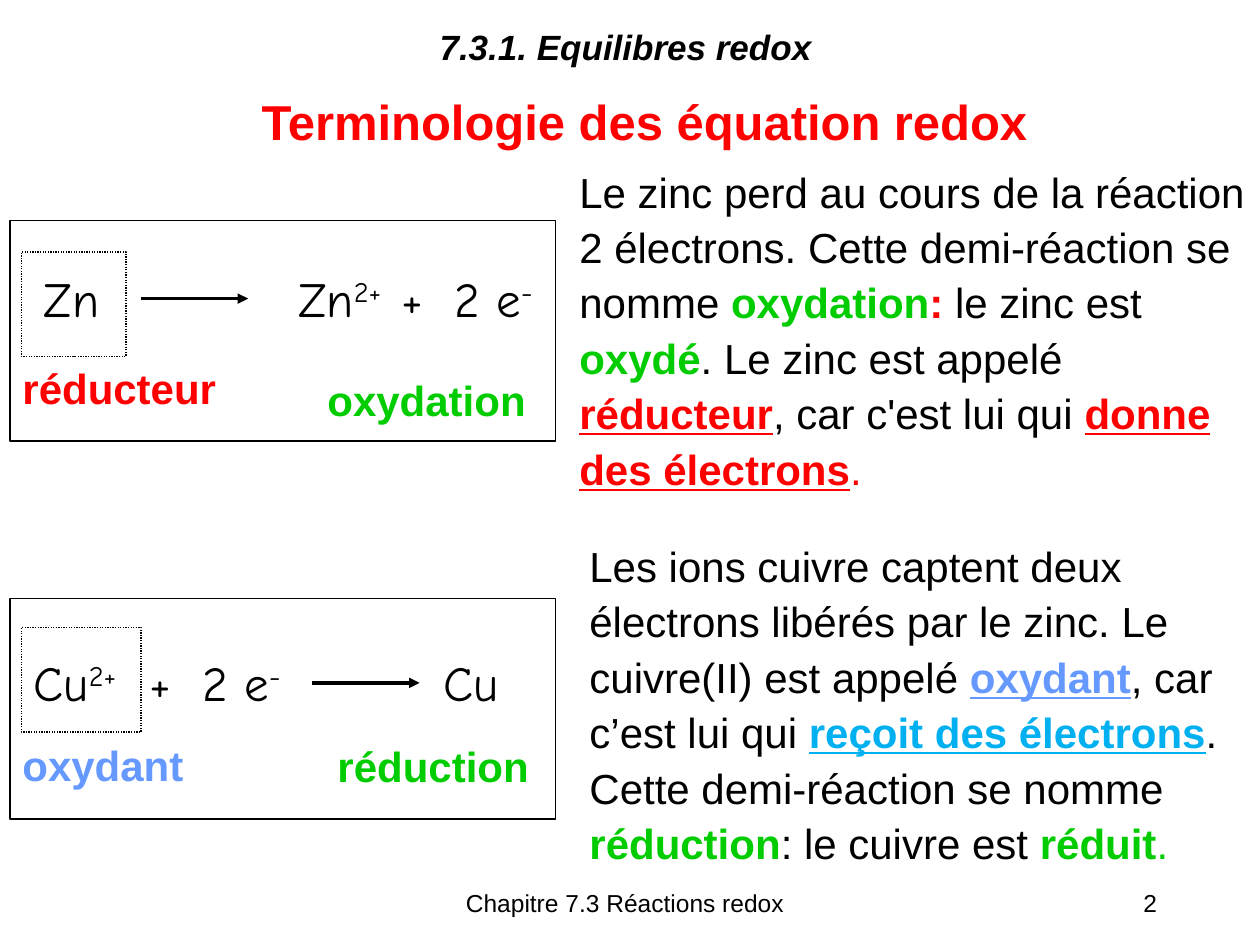
from lxml.etree import SubElement
from pptx import Presentation
from pptx.dml.color import RGBColor
from pptx.enum.dml import MSO_LINE
from pptx.enum.shapes import MSO_CONNECTOR, MSO_SHAPE
from pptx.enum.text import PP_ALIGN
from pptx.oxml.ns import qn
from pptx.util import Inches, Pt

BLACK = RGBColor(0x00, 0x00, 0x00)
WHITE = RGBColor(0xFF, 0xFF, 0xFF)
RED = RGBColor(0xFF, 0x00, 0x00)
GREEN = RGBColor(0x00, 0xCC, 0x00)
BLUE = RGBColor(0x66, 0x99, 0xFF)
CYAN = RGBColor(0x00, 0xB0, 0xF0)

# A run is (text, style); a style holds any of color, bold, italic, underline, sup.
GREEN_BOLD = {"color": GREEN, "bold": True}
RED_BOLD = {"color": RED, "bold": True}
RED_KEY = {"color": RED, "bold": True, "underline": True}
BLUE_BOLD = {"color": BLUE, "bold": True}
BLUE_KEY = {"color": BLUE, "bold": True, "underline": True}
CYAN_KEY = {"color": CYAN, "bold": True, "underline": True}
SUP = {"sup": True}

HEADINGS = [
    # runs, box, size, alignment
    ([("Chapitre 7.3 Réactions redox", {})], (2.67, 7, 4.58, 0.5), 14, PP_ALIGN.CENTER),
    ([("2", {})], (7.2, 7, 2.08, 0.5), 14, PP_ALIGN.RIGHT),
    ([("Terminologie des équation redox", RED_BOLD)], (0, 0.68, 10.23, 0.57), 28, PP_ALIGN.CENTER),
]
SECTION = [("7.3.1. Equilibres redox", {"bold": True, "italic": True})]

EXPLANATIONS = [
    ((4.5, 1.23, 5.5, 1.33), [
        ("Le zinc perd au cours de la réaction 2 électrons. Cette demi-réaction se nomme ", {}),
        ("oxydation", GREEN_BOLD),
        (": ", RED_BOLD),
        ("le zinc est ", {}),
        ("oxydé", GREEN_BOLD),
        (". Le zinc est appelé ", {}),
        ("réducteur", RED_KEY),
        (", car c'est lui qui ", {}),
        ("donne des électrons", RED_KEY),
        (".", {"color": RED}),
    ]),
    ((4.58, 4.2, 5.33, 1.3), [
        ("Les ions cuivre captent deux électrons libérés par le zinc. Le cuivre(II) est appelé ", {}),
        ("oxydant", BLUE_KEY),
        (", car c’est lui qui ", {}),
        ("reçoit des électrons", CYAN_KEY),
        (". Cette demi-réaction se nomme ", {}),
        ("réduction", GREEN_BOLD),
        (": le cuivre est ", {}),
        ("réduit", GREEN_BOLD),
        (".", {"color": GREEN}),
    ]),
]

HALF_REACTIONS = [
    {
        "frame_top": 1.75,
        "equation": [("Zn\tZn", {}), ("2+", SUP), ("\t+\t2 e", {}), ("-", SUP)],
        "equation_at": (0.25, 2.08),
        "tabs": (2.02, 2.84, 3.26),
        "arrow": (1.12, 2.37),
        "reagent_box": (0.17, 2, 0.83, 0.83),
        "labels": [("oxydation", GREEN_BOLD, (2.5, 2.92, 1.82, 0.5)),
                   ("réducteur", RED_BOLD, (0.08, 2.83, 1.8, 0.5))],
    },
    {
        "frame_top": 4.75,
        "equation": [("Cu", {}), ("2+", SUP), ("\t+\t2 e", {}), ("-", SUP), ("\tCu", {})],
        "equation_at": (0.17, 5.13),
        "tabs": (0.92, 1.34, 3.25),
        "arrow": (2.48, 5.42),
        "reagent_box": (0.17, 4.98, 0.95, 0.83),
        "labels": [("réduction", GREEN_BOLD, (2.58, 5.83, 1.78, 0.5)),
                   ("oxydant", BLUE_BOLD, (0.08, 5.82, 1.54, 0.5))],
    },
]
ARROW_LENGTH = 0.85


def inches(box):
    return [Inches(value) for value in box]


def write(frame, runs, size, align=PP_ALIGN.LEFT, font="Arial", wrap=True, tabs=(), spacing=None):
    frame.word_wrap = wrap
    paragraph = frame.paragraphs[0]
    if tabs:
        tab_list = SubElement(paragraph._p.get_or_add_pPr(), qn("a:tabLst"))
        for stop in tabs:
            SubElement(tab_list, qn("a:tab"), pos=str(Inches(stop)), algn="l")
    paragraph.alignment = align
    if spacing:
        paragraph.line_spacing = spacing
    for text, style in runs:
        run = paragraph.add_run()
        run.text = text
        run.font.name = font
        run.font.size = Pt(size)
        run.font.color.rgb = style.get("color", BLACK)
        run.font.bold = style.get("bold", False)
        run.font.italic = style.get("italic", False)
        run.font.underline = style.get("underline", False)
        if style.get("sup"):
            run._r.get_or_add_rPr().set("baseline", "30000")


def add_text(slide, box, runs, size, **options):
    frame = slide.shapes.add_textbox(*inches(box)).text_frame
    write(frame, runs, size, **options)
    return frame


def add_outline(slide, box, dash=None):
    outline = slide.shapes.add_shape(MSO_SHAPE.RECTANGLE, *inches(box))
    outline.shadow.inherit = False
    outline.fill.background()
    outline.line.color.rgb = BLACK
    outline.line.width = Pt(0.75)
    if dash:
        outline.line.dash_style = dash


def add_arrow(slide, left, top):
    arrow = slide.shapes.add_connector(
        MSO_CONNECTOR.STRAIGHT, *inches((left, top, left + ARROW_LENGTH, top)))
    arrow.line.color.rgb = BLACK
    arrow.line.width = Pt(2)
    SubElement(arrow.line._get_or_add_ln(), qn("a:tailEnd"), type="triangle")
    SubElement(arrow._element.spPr, qn("a:effectLst"))


def add_half_reaction(slide, reaction):
    add_outline(slide, (0.08, reaction["frame_top"], 4.33, 1.75))
    add_outline(slide, reaction["reagent_box"], MSO_LINE.ROUND_DOT)
    equation = add_text(slide, (*reaction["equation_at"], 4.13, 0.57), reaction["equation"], 28,
                        font="Comic Neue", tabs=reaction["tabs"])
    equation.margin_right = 0
    add_arrow(slide, *reaction["arrow"])
    for label, style, box in reaction["labels"]:
        add_text(slide, box, [(label, style)], 24, wrap=False)


def main():
    deck = Presentation()
    deck.slide_width, deck.slide_height = Inches(10), Inches(7.5)
    slide = deck.slides.add_slide(deck.slide_layouts[6])

    for runs, box, size, align in HEADINGS:
        add_text(slide, box, runs, size, align=align)
    for box, runs in EXPLANATIONS:
        add_text(slide, box, runs, 24, spacing=1.1)
    for reaction in HALF_REACTIONS:
        add_half_reaction(slide, reaction)

    section = slide.shapes.add_shape(MSO_SHAPE.RECTANGLE, *inches((3.39, 0.15, 3.18, 0.44)))
    section.shadow.inherit = False
    section.fill.solid()
    section.fill.fore_color.rgb = WHITE
    section.line.fill.background()
    write(section.text_frame, SECTION, 20, wrap=False)

    deck.save("out.pptx")


if __name__ == "__main__":
    main()
